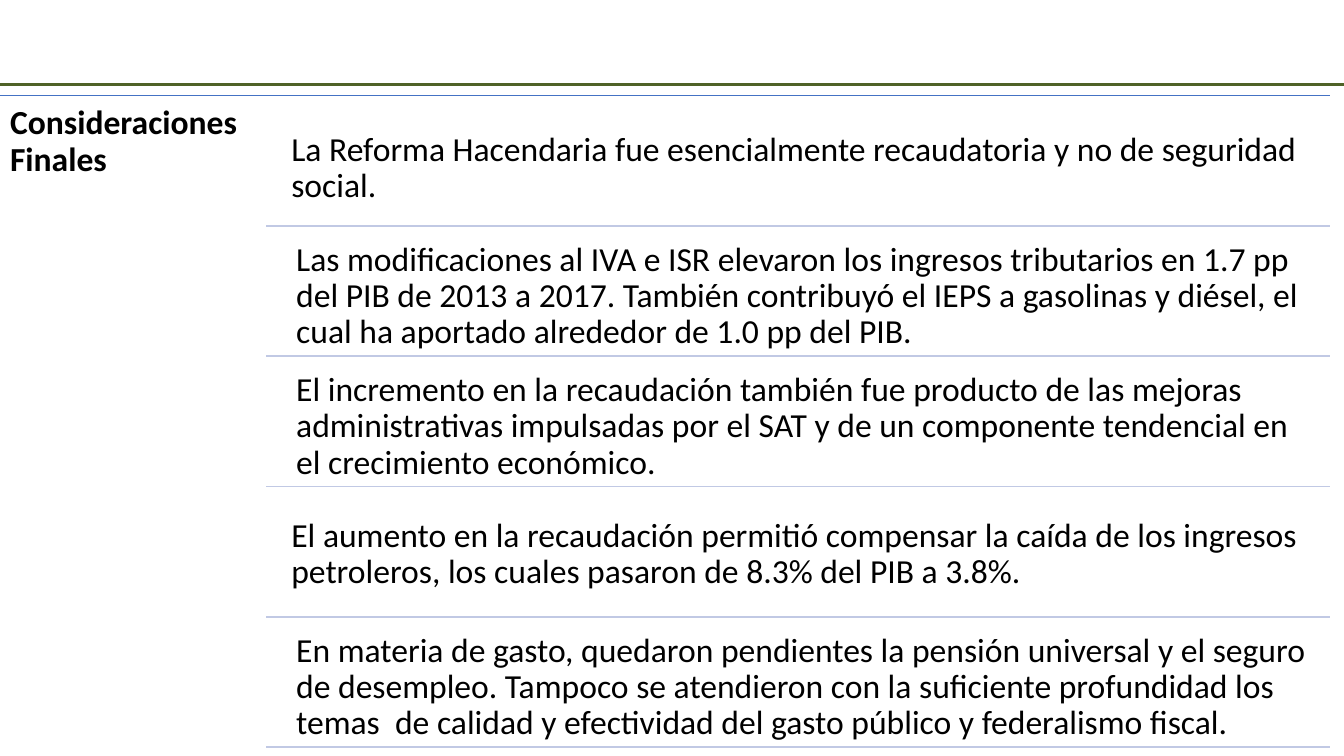
from lxml import etree
from pptx import Presentation
from pptx.dml.color import RGBColor
from pptx.enum.shapes import MSO_CONNECTOR
from pptx.enum.text import MSO_ANCHOR, MSO_AUTO_SIZE, PP_ALIGN
from pptx.oxml.ns import qn
from pptx.util import Pt

BLACK = RGBColor(0x00, 0x00, 0x00)
GREEN = RGBColor(0x4F, 0x62, 0x28)
BLUE = RGBColor(0x44, 0x72, 0xC4)
PALE_BLUE = RGBColor(0xC1, 0xC9, 0xE4)

SLIDE_WIDTH, SLIDE_HEIGHT = 960, 540
TITLE_ONLY = 5
RULE_RIGHT = 949.7
HEADER_Y = 68.4
DIVIDER_LEFT = 190.1
ROW_LEFT, ROW_TOP = 204.5, 72.7
ROW_WIDTH, ROW_HEIGHT, ROW_PITCH = 745.2, 88.6, 93.1

# Each conclusion with its left and top inset
CONCLUSIONS = [
    ("La Reforma Hacendaria fue esencialmente recaudatoria y no de seguridad "
     "social.", 3.6, 21.6),
    ("Las modificaciones al IVA e ISR elevaron los ingresos tributarios en "
     "1.7 pp del PIB de 2013 a 2017. También contribuyó el IEPS a gasolinas "
     "y diésel, el cual ha aportado alrededor de 1.0 pp del PIB.", 7.2, 7.2),
    ("El incremento en la recaudación también fue producto de las mejoras "
     "administrativas impulsadas por el SAT y de un componente tendencial en "
     "el crecimiento económico.", 7.2, 7.2),
    ("El aumento en la recaudación permitió compensar la caída de los "
     "ingresos petroleros, los cuales pasaron de 8.3% del PIB a 3.8%.",
     3.6, 18),
    ("En materia de gasto, quedaron pendientes la pensión universal y el "
     "seguro de desempleo. Tampoco se atendieron con la suficiente "
     "profundidad los temas  de calidad y efectividad del gasto público y "
     "federalismo fiscal.", 7.2, 7.2),
]


class SlideBuilder:
    font_name = "Calibri"
    font_size = 24
    line_spacing = 0.9

    def __init__(self, slide):
        self.slide = slide

    def rule(self, left, right, y, color, weight=1):
        rule = self.slide.shapes.add_connector(
            MSO_CONNECTOR.STRAIGHT, Pt(left), Pt(y), Pt(right), Pt(y))
        rule.line.color.rgb = color
        rule.line.width = Pt(weight)
        etree.SubElement(rule.element.spPr, qn("a:effectLst"))

    def title(self, text, left, top, width, height):
        heading = self.slide.shapes.title
        heading.left, heading.top = Pt(left), Pt(top)
        heading.width, heading.height = Pt(width), Pt(height)
        self.fill_text(heading.text_frame, text, 7.2, 7.2, bold=True)

    def passage(self, text, left, top, width, height, inset_x, inset_top):
        box = self.slide.shapes.add_textbox(
            Pt(left), Pt(top), Pt(width), Pt(height))
        self.fill_text(box.text_frame, text, inset_x, inset_top)

    def fill_text(self, frame, text, inset_x, inset_top, bold=False):
        frame.text = text
        frame.word_wrap = True
        frame.auto_size = MSO_AUTO_SIZE.NONE
        frame.vertical_anchor = MSO_ANCHOR.TOP
        frame.margin_left = frame.margin_right = Pt(inset_x)
        frame.margin_top = Pt(inset_top)
        frame.margin_bottom = Pt(0)
        paragraph = frame.paragraphs[0]
        paragraph.alignment = PP_ALIGN.LEFT
        paragraph.line_spacing = self.line_spacing
        paragraph.space_before = Pt(0)
        font = paragraph.runs[0].font
        font.name = self.font_name
        font.size = Pt(self.font_size)
        font.bold = bold
        font.color.rgb = BLACK


def main():
    deck = Presentation()
    deck.slide_width, deck.slide_height = Pt(SLIDE_WIDTH), Pt(SLIDE_HEIGHT)
    builder = SlideBuilder(
        deck.slides.add_slide(deck.slide_layouts[TITLE_ONLY]))

    builder.rule(0, SLIDE_WIDTH, 60.5, GREEN, weight=2)
    builder.rule(0, RULE_RIGHT, HEADER_Y, BLUE)
    builder.title("Consideraciones Finales", 0, HEADER_Y, DIVIDER_LEFT, 470)

    for row, (text, inset_x, inset_top) in enumerate(CONCLUSIONS):
        top = ROW_TOP + row * ROW_PITCH
        builder.passage(text, ROW_LEFT, top, ROW_WIDTH, ROW_HEIGHT,
                        inset_x, inset_top)
        builder.rule(DIVIDER_LEFT, RULE_RIGHT, top + ROW_HEIGHT, PALE_BLUE)

    deck.save("out.pptx")


if __name__ == "__main__":
    main()
